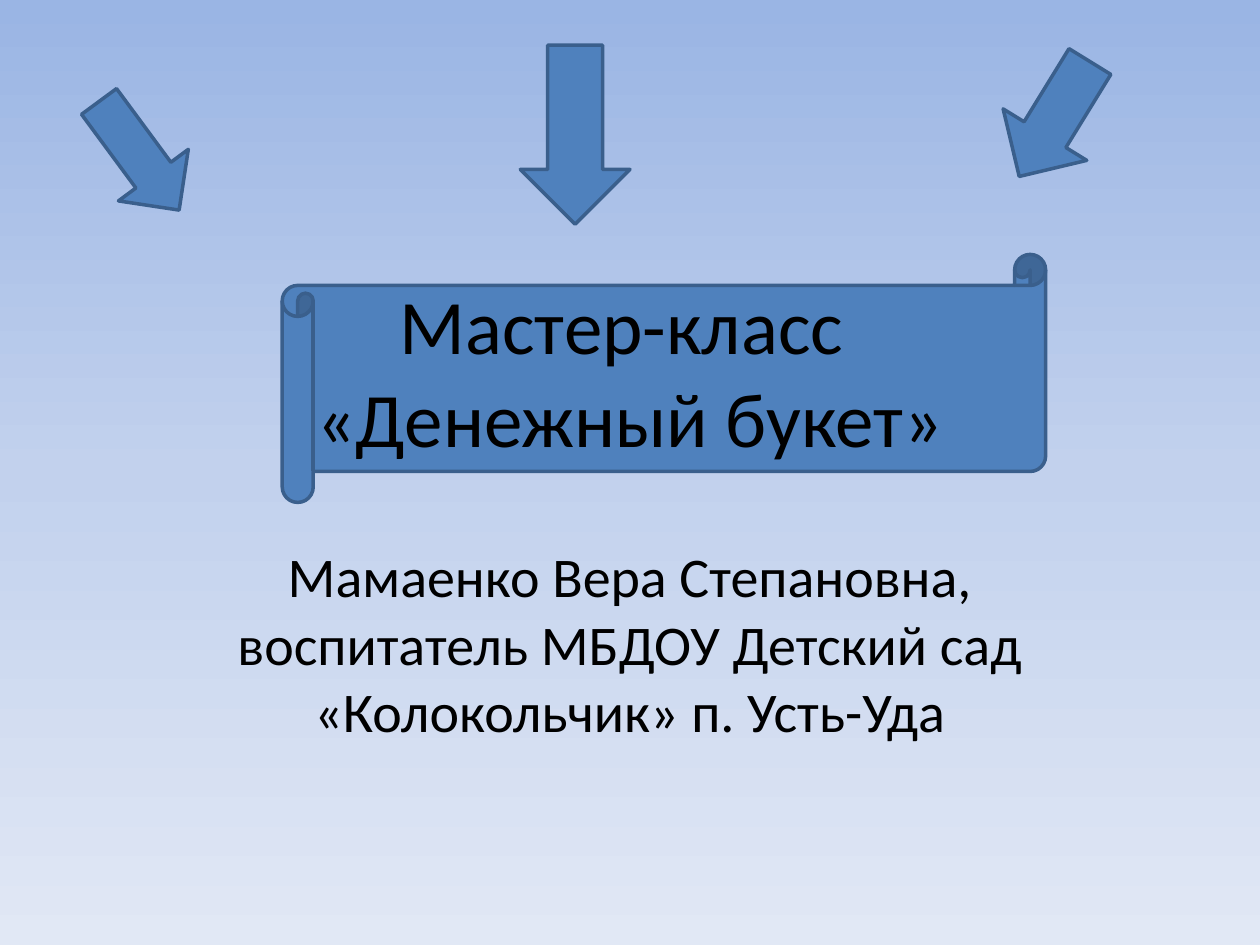
import copy

import pptx
import pptx.dml.color
import pptx.enum.shapes
import pptx.enum.text
import pptx.oxml.ns
import pptx.util

Cm, Pt = pptx.util.Cm, pptx.util.Pt
RGB = pptx.dml.color.RGBColor.from_string
MSO_SHAPE = pptx.enum.shapes.MSO_SHAPE
ANCHOR = pptx.enum.text.MSO_ANCHOR
COLORS = {
    "sky_top": "9AB5E4", "sky_middle": "C2D1ED", "sky_bottom": "E1E8F5",
    "fill": "4F81BD", "line": "3A5F8C", "text": "000000",
}

prs = pptx.Presentation()
prs.slide_width, prs.slide_height = Cm(25.4), Cm(19.05)
s = prs.slides.add_slide(prs.slide_layouts[6])


def add_blue_shape(kind, box, rotation=0):
    sp = s.shapes.add_shape(kind, *map(Cm, box))
    sp.rotation = rotation
    sp.shadow.inherit = False
    sp.fill.solid()
    sp.fill.fore_color.rgb = RGB(COLORS["fill"])
    sp.line.color.rgb = RGB(COLORS["line"])
    sp.line.width = Pt(2)


def add_text(text, box, size, anchor):
    tf = s.shapes.add_textbox(*map(Cm, box)).text_frame
    tf.word_wrap = True
    tf.vertical_anchor = anchor
    p = tf.paragraphs[0]
    p.text = text
    p.alignment = pptx.enum.text.PP_ALIGN.CENTER
    p.font.name = "Calibri"
    p.font.size = Pt(size)
    p.font.color.rgb = RGB(COLORS["text"])


# Background: three-stop gradient from top to bottom
fill = s.background.fill
fill.gradient()
fill.gradient_angle = 270
stops = s.element.find(".//" + pptx.oxml.ns.qn("a:gsLst"))
stops.insert(1, copy.deepcopy(stops[0]))
sky = [(0, "sky_top"), (0.5, "sky_middle"), (1, "sky_bottom")]
for stop, (position, name) in zip(fill.gradient_stops, sky):
    stop.position = position
    stop.color.rgb = RGB(COLORS[name])

# Scroll with the title, author below
add_blue_shape(MSO_SHAPE.HORIZONTAL_SCROLL, (5.69, 5.13, 15.39, 5))
add_text("Мастер-класс \v«Денежный букет»",
         (1.91, 4.72, 21.59, 5.49), 44, ANCHOR.MIDDLE)
add_text("Мамаенко Вера Степановна, воспитатель МБДОУ Детский сад "
         "«Колокольчик» п. Усть-Уда",
         (3.81, 10.8, 17.78, 4.88), 32, ANCHOR.TOP)

# Arrows pointing at the title
arrows = [
    ((10.49, 0.91, 2.21, 3.61), 0),
    ((20.27, 1.04, 1.98, 2.72), 31.6),
    ((1.93, 1.78, 1.75, 2.72), 323.6),
]
for box, rotation in arrows:
    add_blue_shape(MSO_SHAPE.DOWN_ARROW, box, rotation)

prs.save("out.pptx")
